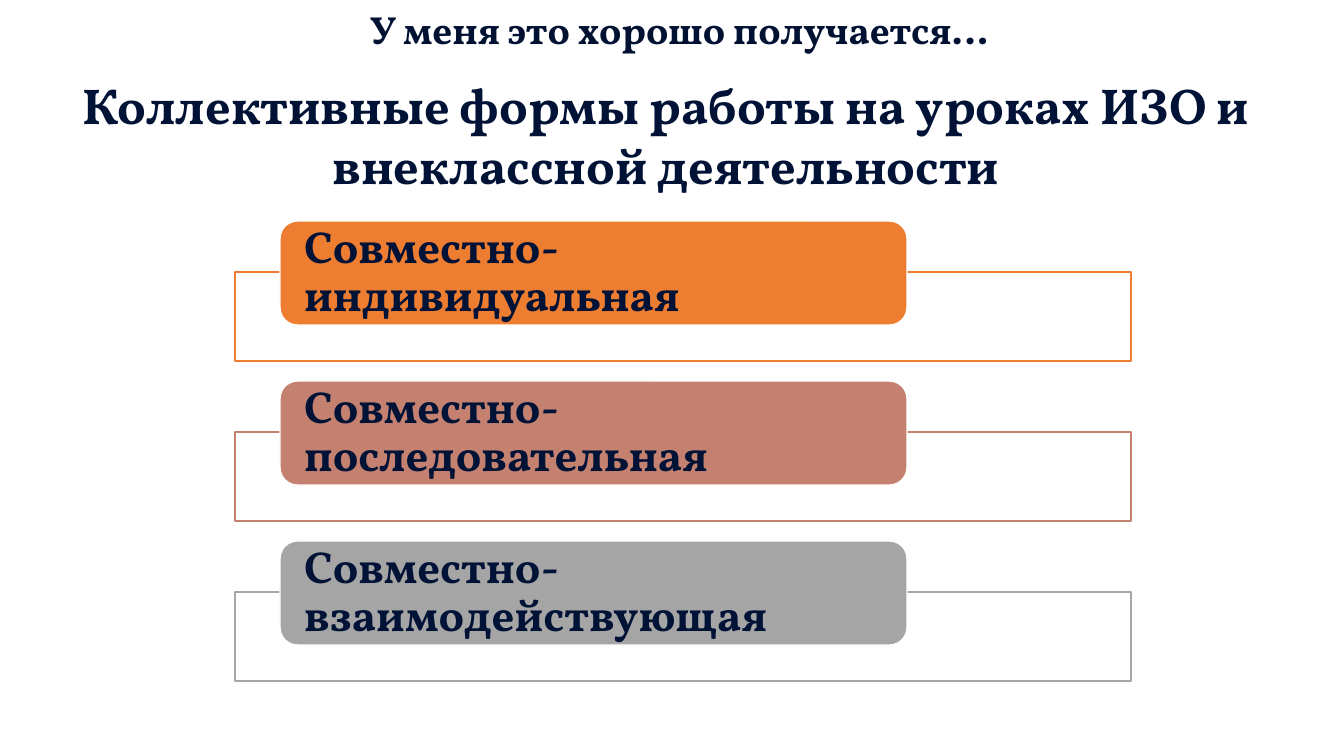
"""Build the slide on collective forms of work in art lessons."""
from pptx import Presentation
from pptx.dml.color import RGBColor
from pptx.enum.shapes import MSO_SHAPE as Shape
from pptx.enum.text import MSO_ANCHOR as Anchor, PP_ALIGN as Align
from pptx.util import Pt

EMU_PER_PX = 914400 / 100.8
SLIDE_SIZE = (1344, 756)
FONT = "Vollkorn"
WHITE = "FFFFFF"
NAVY = "001236"

HEADINGS = [
    ("У меня это хорошо получается…", (227, 0, 904, 57), 28, "001132"),
    ("Коллективные формы работы на уроках ИЗО и внеклассной деятельности",
     (0, 69, 1332, 132), 36, NAVY),
]
FORMS = [
    ("Совместно-индивидуальная", "ED7D31"),
    ("Совместно-последовательная", "C48170"),
    ("Совместно-взаимодействующая", "A5A5A5"),
]
FORM_TOP, FORM_PITCH = 221, 160
LABEL_LEFT, LABEL_WIDTH, LABEL_HEIGHT = 280, 627, 104
FRAME_LEFT, FRAME_WIDTH, FRAME_HEIGHT = 235, 896, 89
FRAME_DROP = 51
LABEL_FRAME = {
    "margin_left": 19, "margin_right": 19, "margin_top": 0, "margin_bottom": 0,
}


def px(length):
    return round(length * EMU_PER_PX)


def color(value):
    return RGBColor.from_string(value)


def set_all(target, values):
    for name, value in values.items():
        setattr(target, name, value)


def write(shape, text, size, ink, paragraph_format):
    shape.text_frame.word_wrap = True
    paragraph = shape.text_frame.paragraphs[0]
    paragraph.add_run().text = text
    set_all(paragraph, paragraph_format)
    font = paragraph.runs[0].font
    set_all(font, {"name": FONT, "size": Pt(size), "bold": True})
    font.color.rgb = color(ink)


def add_box(slide, kind, box, fill, line):
    shape = slide.shapes.add_shape(kind, *map(px, box))
    shape.shadow.inherit = False
    shape.fill.solid()
    shape.fill.fore_color.rgb = color(fill)
    shape.line.color.rgb = color(line)
    shape.line.width = Pt(1)
    return shape


def add_form(slide, text, accent, top):
    frame_box = (FRAME_LEFT, top + FRAME_DROP, FRAME_WIDTH, FRAME_HEIGHT)
    add_box(slide, Shape.RECTANGLE, frame_box, WHITE, accent)
    label_box = (LABEL_LEFT, top, LABEL_WIDTH, LABEL_HEIGHT)
    label = add_box(slide, Shape.ROUNDED_RECTANGLE, label_box, accent, WHITE)
    set_all(label.text_frame, {name: px(value) for name, value in LABEL_FRAME.items()})
    label.text_frame.vertical_anchor = Anchor.MIDDLE
    write(label, text, 32, NAVY, {"alignment": Align.LEFT, "line_spacing": 0.9})


def main():
    presentation = Presentation()
    presentation.slide_width, presentation.slide_height = map(px, SLIDE_SIZE)
    slide = presentation.slides.add_slide(presentation.slide_layouts[6])
    for text, box, size, ink in HEADINGS:
        heading = slide.shapes.add_textbox(*map(px, box))
        write(heading, text, size, ink, {"alignment": Align.CENTER})
    for row, (text, accent) in enumerate(FORMS):
        add_form(slide, text, accent, FORM_TOP + row * FORM_PITCH)
    presentation.save("out.pptx")


if __name__ == "__main__":
    main()
